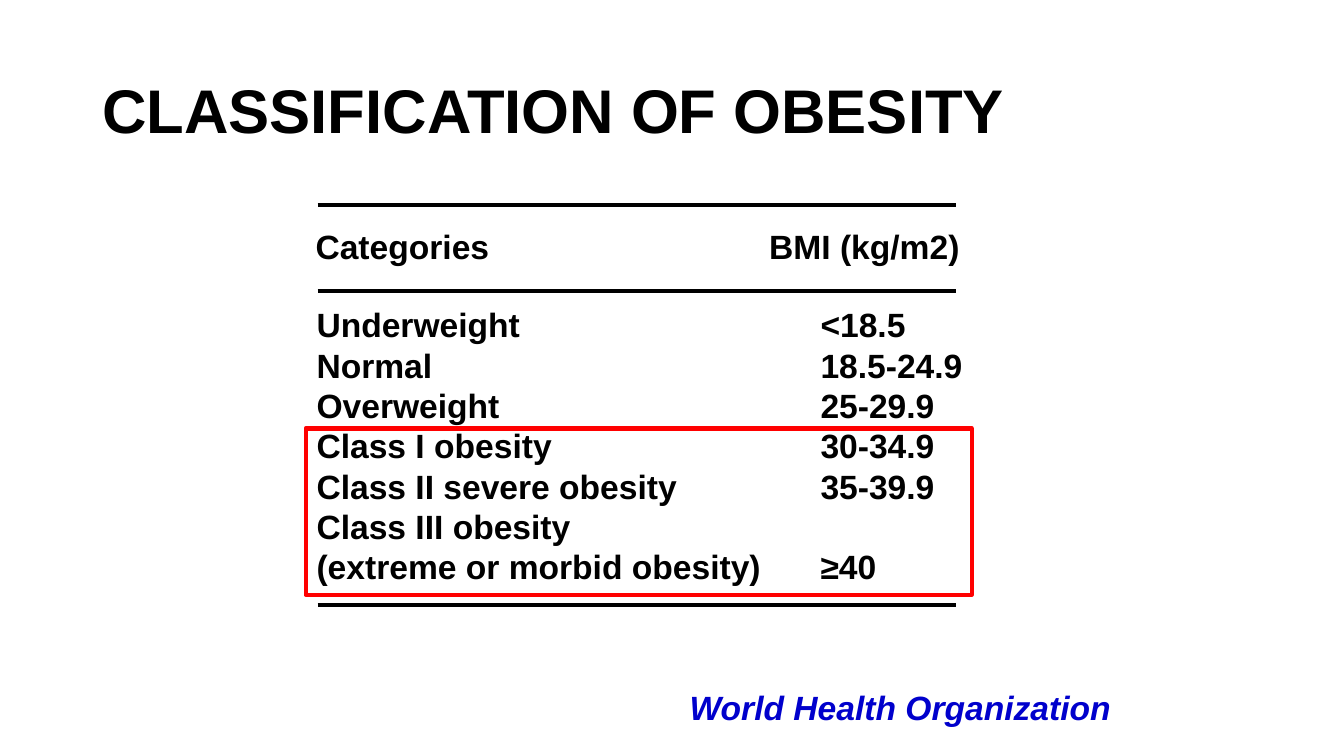
from dataclasses import dataclass

from lxml.etree import SubElement
from pptx import Presentation
from pptx.dml.color import RGBColor
from pptx.enum.shapes import MSO_CONNECTOR, MSO_SHAPE
from pptx.enum.text import MSO_ANCHOR, MSO_AUTO_SIZE
from pptx.oxml.ns import qn
from pptx.slide import Slide
from pptx.util import Pt

BLACK = RGBColor(0x00, 0x00, 0x00)
BLUE = RGBColor(0x00, 0x00, 0xCC)
RED = RGBColor(0xFF, 0x00, 0x00)

FONT = "Arial"
RULE_WIDTH = 3
RULE_LEFT, RULE_RIGHT = 226.8, 682.6
RULE_TOPS = (146.2, 208.1, 432)
BMI_TAB = 363 - 3

BMI_ROWS = (
    ("Underweight", "<18.5"),
    ("Normal", "18.5-24.9"),
    ("Overweight", "25-29.9"),
    ("Class I obesity", "30-34.9"),
    ("Class II severe obesity", "35-39.9"),
    ("Class III obesity",),
    ("(extreme or morbid obesity)", "≥40"),
)


@dataclass(frozen=True)
class TextBlock:
    text: str
    left: float
    top: float
    width: float
    height: float
    size: float = 24
    color: RGBColor = BLACK
    italic: bool = False
    wraps: bool = False
    anchor: MSO_ANCHOR = MSO_ANCHOR.TOP
    line_spacing: float = 1.0
    tab_stop: float | None = None


TEXT_BLOCKS = (
    TextBlock("CLASSIFICATION OF OBESITY", 66, 28.75, 828, 104.4, size=44,
              wraps=True, anchor=MSO_ANCHOR.MIDDLE, line_spacing=0.9),
    TextBlock("Categories", 218.3, 157.9, 139.5, 36.35),
    TextBlock("BMI (kg/m2)", 542.3, 157.9, 151.9, 36.35),
    TextBlock("\n".join("\t".join(row) for row in BMI_ROWS),
              219, 213.8, 497.5, 211, wraps=True, tab_stop=BMI_TAB),
    TextBlock("World Health Organization", 485.5, 487, 318.2, 36.35,
              color=BLUE, italic=True),
)


def add_text(slide: Slide, block: TextBlock) -> None:
    shape = slide.shapes.add_textbox(
        Pt(block.left), Pt(block.top), Pt(block.width), Pt(block.height))
    frame = shape.text_frame
    frame.text = block.text
    frame.word_wrap = block.wraps
    frame.vertical_anchor = block.anchor
    frame.auto_size = (MSO_AUTO_SIZE.NONE if block.wraps
                       else MSO_AUTO_SIZE.SHAPE_TO_FIT_TEXT)
    for paragraph in frame.paragraphs:
        paragraph.line_spacing = block.line_spacing
        if block.tab_stop is not None:
            properties = paragraph._p.get_or_add_pPr()
            tab_list = SubElement(properties, qn("a:tabLst"))
            SubElement(tab_list, qn("a:tab"),
                       pos=str(Pt(block.tab_stop)), algn="l")
        for run in paragraph.runs:
            run.font.name = FONT
            run.font.size = Pt(block.size)
            run.font.bold = True
            run.font.italic = block.italic
            run.font.color.rgb = block.color


def add_rule(slide: Slide, top: float) -> None:
    rule = slide.shapes.add_connector(
        MSO_CONNECTOR.STRAIGHT,
        Pt(RULE_LEFT), Pt(top), Pt(RULE_RIGHT), Pt(top))
    rule.line.color.rgb = BLACK
    rule.line.width = Pt(RULE_WIDTH)
    SubElement(rule._element.spPr, qn("a:effectLst"))


def add_obesity_frame(slide: Slide) -> None:
    shape = slide.shapes.add_shape(
        MSO_SHAPE.RECTANGLE, Pt(218.3), Pt(306), Pt(475.8), Pt(118.8))
    shape.shadow.inherit = False
    shape.fill.background()
    shape.line.color.rgb = RED
    shape.line.width = Pt(RULE_WIDTH)


def main() -> None:
    presentation = Presentation()
    presentation.slide_width = Pt(960)
    presentation.slide_height = Pt(540)
    slide = presentation.slides.add_slide(presentation.slide_layouts[6])
    for block in TEXT_BLOCKS:
        add_text(slide, block)
    for top in RULE_TOPS:
        add_rule(slide, top)
    add_obesity_frame(slide)
    presentation.save("out.pptx")


if __name__ == "__main__":
    main()
